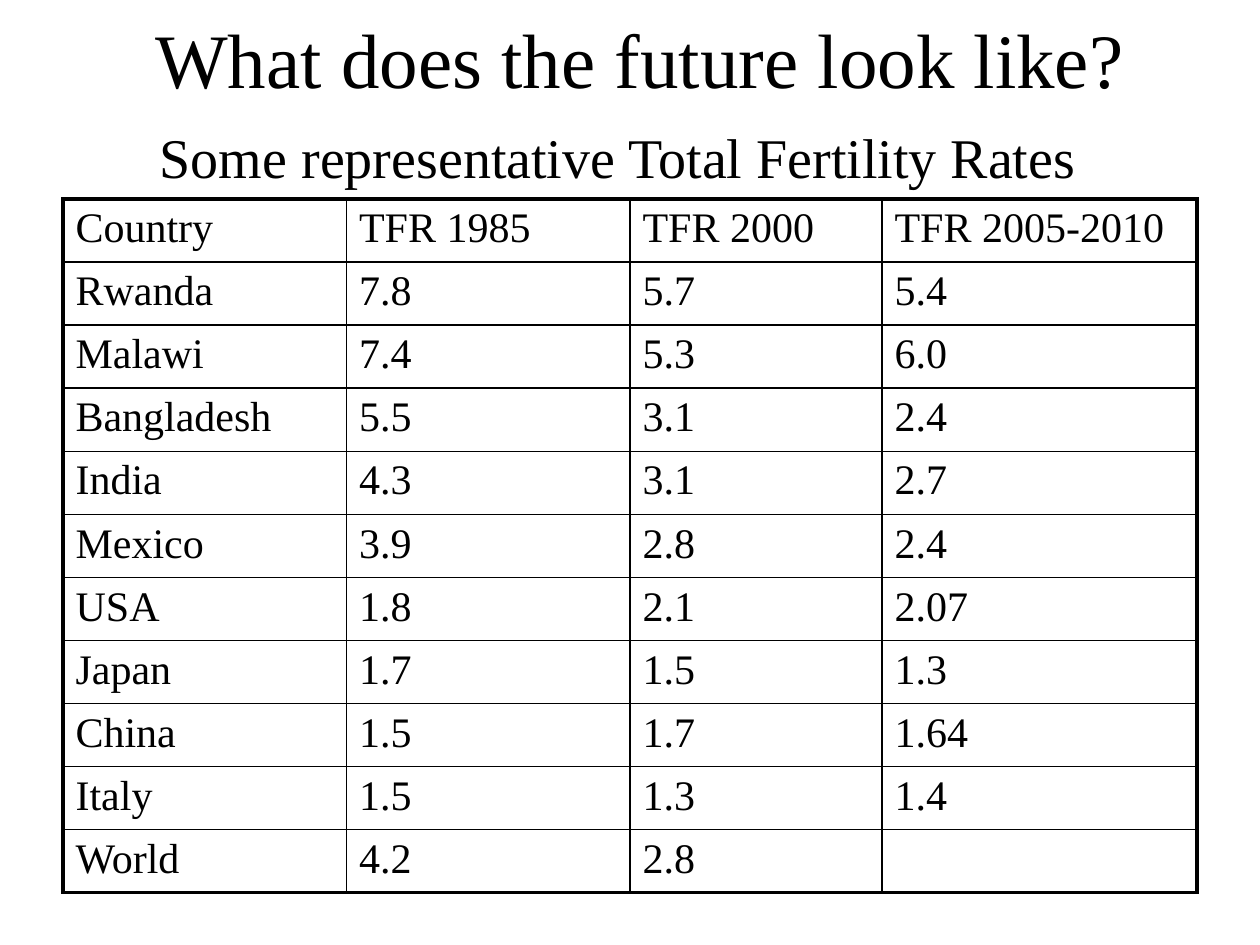
from dataclasses import dataclass
from typing import NamedTuple

from lxml import etree
from pptx import Presentation
from pptx import util as u
from pptx.dml.color import RGBColor
from pptx.enum import text
from pptx.oxml import ns


@dataclass(frozen=True)
class Theme:
    font: str = "Times New Roman"
    ink: str = "000000"
    title_size: float = 44
    subtitle_size: float = 32
    table_size: float = 24
    inner_line: float = 1
    outer_line: float = 2.25


class Box(NamedTuple):
    left: float
    top: float
    width: float
    height: float

    def lengths(self) -> list:
        return [u.Inches(value) for value in self]


class FertilityRow(NamedTuple):
    country: str
    rate_1985: str
    rate_2000: str
    rate_2010: str


THEME = Theme()
TITLE_BOX = Box(0.83, 0, 8.5, 0.92)
SUBTITLE_BOX = Box(1.17, 0.92, 7.51, 0.63)
TABLE_BOX = Box(0.5, 1.58, 9, 5.5)
COLUMN_WIDTHS = (2.25, 2.25, 2, 2.5)
ROWS = (
    FertilityRow("Country", "TFR 1985", "TFR 2000", "TFR 2005-2010"),
    FertilityRow("Rwanda", "7.8", "5.7", "5.4"),
    FertilityRow("Malawi", "7.4", "5.3", "6.0"),
    FertilityRow("Bangladesh", "5.5", "3.1", "2.4"),
    FertilityRow("India", "4.3", "3.1", "2.7"),
    FertilityRow("Mexico", "3.9", "2.8", "2.4"),
    FertilityRow("USA", "1.8", "2.1", "2.07"),
    FertilityRow("Japan", "1.7", "1.5", "1.3"),
    FertilityRow("China", "1.5", "1.7", "1.64"),
    FertilityRow("Italy", "1.5", "1.3", "1.4"),
    FertilityRow("World", "4.2", "2.8", ""),
)


def write_text(frame, content: str, size: float) -> None:
    paragraph = frame.paragraphs[0]
    if content:
        paragraph.text = content
    paragraph.font.name = THEME.font
    paragraph.font.size = u.Pt(size)
    paragraph.font.color.rgb = RGBColor.from_string(THEME.ink)


def set_borders(cell, outer_sides: dict[str, bool]) -> None:
    """Draw the four cell edges, heavier on the sides that are True."""
    properties = cell._tc.get_or_add_tcPr()
    for side, is_outer in outer_sides.items():
        width = THEME.outer_line if is_outer else THEME.inner_line
        line = etree.SubElement(properties, ns.qn(f"a:ln{side}"), w=str(u.Pt(width)))
        fill = etree.SubElement(line, ns.qn("a:solidFill"))
        etree.SubElement(fill, ns.qn("a:srgbClr"), val=THEME.ink)


def add_title(slide) -> None:
    title = slide.shapes.title
    title.left, title.top, title.width, title.height = TITLE_BOX.lengths()
    frame = title.text_frame
    frame.vertical_anchor = text.MSO_ANCHOR.MIDDLE
    write_text(frame, "What does the future look like?", THEME.title_size)
    frame.paragraphs[0].alignment = text.PP_ALIGN.CENTER


def add_subtitle(slide) -> None:
    frame = slide.shapes.add_textbox(*SUBTITLE_BOX.lengths()).text_frame
    frame.word_wrap = False
    frame.auto_size = text.MSO_AUTO_SIZE.SHAPE_TO_FIT_TEXT
    write_text(frame, "Some representative Total Fertility Rates", THEME.subtitle_size)


def add_fertility_table(slide) -> None:
    last_row, last_column = len(ROWS) - 1, len(COLUMN_WIDTHS) - 1
    table = slide.shapes.add_table(
        len(ROWS), len(COLUMN_WIDTHS), *TABLE_BOX.lengths()
    ).table
    table.first_row = False
    table.horz_banding = False
    for column, width in zip(table.columns, COLUMN_WIDTHS):
        column.width = u.Inches(width)
    for row_index, row in enumerate(ROWS):
        for column_index, content in enumerate(row):
            cell = table.cell(row_index, column_index)
            write_text(cell.text_frame, content, THEME.table_size)
            set_borders(cell, {
                "L": column_index == 0,
                "R": column_index == last_column,
                "T": row_index == 0,
                "B": row_index == last_row,
            })
            cell.fill.background()


def main() -> None:
    presentation = Presentation()
    presentation.slide_width = u.Inches(10)
    presentation.slide_height = u.Inches(7.5)
    slide = presentation.slides.add_slide(presentation.slide_layouts[5])
    add_title(slide)
    add_subtitle(slide)
    add_fertility_table(slide)
    presentation.save("out.pptx")


if __name__ == "__main__":
    main()
